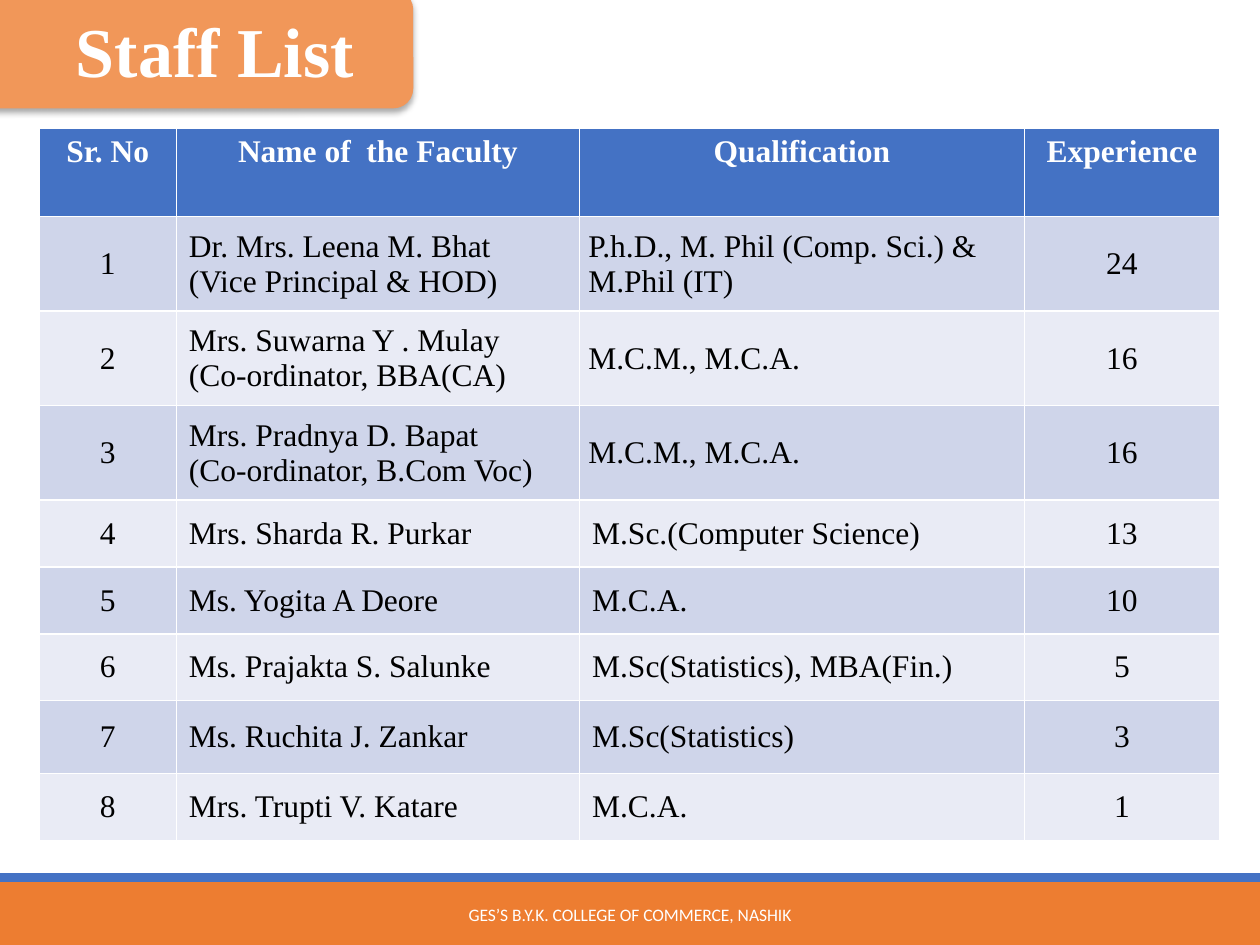
from lxml import etree
from pptx import Presentation
from pptx.dml.color import RGBColor
from pptx.enum import shapes, text
from pptx.oxml import ns
from pptx.util import Inches, Pt

WHITE = RGBColor(0xFF, 0xFF, 0xFF)
BLACK = RGBColor(0, 0, 0)
ORANGE = RGBColor(0xED, 0x7D, 0x31)
LIGHT_ORANGE = RGBColor(0xF1, 0x97, 0x59)
BLUE = RGBColor(0x44, 0x72, 0xC4)
BANDS = (RGBColor(0xCF, 0xD5, 0xEA), RGBColor(0xE9, 0xEB, 0xF5))
SERIF = "Times New Roman"

HEADINGS = ("Sr. No", "Name of  the Faculty", "Qualification", "Experience")
STAFF = (
    ("Dr. Mrs. Leena M. Bhat\n(Vice Principal & HOD)",
     "P.h.D., M. Phil (Comp. Sci.) & M.Phil (IT)", 24),
    ("Mrs. Suwarna Y . Mulay\n(Co-ordinator, BBA(CA)", "M.C.M., M.C.A.", 16),
    ("Mrs. Pradnya D. Bapat\n(Co-ordinator, B.Com Voc)", "M.C.M., M.C.A.", 16),
    ("Mrs. Sharda R. Purkar", "M.Sc.(Computer Science)", 13),
    ("Ms. Yogita A Deore", "M.C.A.", 10),
    ("Ms. Prajakta S. Salunke", "M.Sc(Statistics), MBA(Fin.)", 5),
    ("Ms. Ruchita J. Zankar", "M.Sc(Statistics)", 3),
    ("Mrs. Trupti V. Katare", "M.C.A.", 1),
)
COLUMN_WIDTHS = (1.09, 3.2, 3.53, 1.55)
ROW_HEIGHTS = (0.7, 0.75, 0.75, 0.75, 0.53, 0.53, 0.53, 0.58, 0.53)
CENTRED_COLUMNS = (0, 3)


def box(left, top, width, height):
    return Inches(left), Inches(top), Inches(width), Inches(height)


def style_text(frame, font_name, size, color, bold=False, centred=True):
    for paragraph in frame.paragraphs:
        paragraph.alignment = text.PP_ALIGN.CENTER if centred else text.PP_ALIGN.LEFT
        paragraph.font.name = font_name
        paragraph.font.size = Pt(size)
        paragraph.font.bold = bold
        paragraph.font.color.rgb = color


def add_block(slide, kind, place, color):
    block = slide.shapes.add_shape(kind, *box(*place))
    block.shadow.inherit = False
    block.fill.solid()
    block.fill.fore_color.rgb = color
    block.line.fill.background()
    return block


def add_soft_shadow(block):
    effects = block._element.spPr.find(ns.qn("a:effectLst"))
    shadow = etree.SubElement(
        effects, ns.qn("a:outerShdw"), blurRad=str(Pt(3.5)), dist=str(Pt(2.2)),
        dir="5400000", algn="ctr", rotWithShape="0")
    color = etree.SubElement(shadow, ns.qn("a:srgbClr"), val=str(BLACK))
    etree.SubElement(color, ns.qn("a:alpha"), val="32000")


def add_title(slide):
    place = (-0.63, -0.08, 3.91, 0.94)
    tab = add_block(slide, shapes.MSO_SHAPE.ROUNDED_RECTANGLE, place, LIGHT_ORANGE)
    add_soft_shadow(tab)
    title = slide.shapes.title
    title.left, title.top, title.width, title.height = box(*place)
    title.text = "Staff List"
    frame = title.text_frame
    frame.margin_left = Inches(0.86)
    frame.vertical_anchor = text.MSO_ANCHOR.MIDDLE
    style_text(frame, SERIF, 40, WHITE, bold=True)
    tab._element.addnext(title._element)


def fill_cell(cell, words, color):
    cell.text = str(words)
    cell.fill.solid()
    cell.fill.fore_color.rgb = color


def add_staff_table(slide):
    table = slide.shapes.add_table(
        len(STAFF) + 1, len(HEADINGS), *box(0.31, 1.02, 9.37, 5.65)).table
    for column, width in zip(table.columns, COLUMN_WIDTHS):
        column.width = Inches(width)
    for row, height in zip(table.rows, ROW_HEIGHTS):
        row.height = Inches(height)
    for column, heading in enumerate(HEADINGS):
        cell = table.cell(0, column)
        fill_cell(cell, heading, BLUE)
        style_text(cell.text_frame, SERIF, 18, WHITE, bold=True)
    for number, member in enumerate(STAFF, 1):
        for column, words in enumerate((number, *member)):
            cell = table.cell(number, column)
            fill_cell(cell, words, BANDS[(number - 1) % 2])
            cell.vertical_anchor = text.MSO_ANCHOR.MIDDLE
            if number <= 3 and column >= 2:
                cell.margin_left = cell.margin_right = Inches(0.07)
                cell.margin_top = cell.margin_bottom = 0
            style_text(cell.text_frame, SERIF, 18, BLACK,
                       centred=column in CENTRED_COLUMNS)


def add_footer(slide):
    add_block(slide, shapes.MSO_SHAPE.RECTANGLE, (0, 7, 10, 0.5), ORANGE)
    add_block(slide, shapes.MSO_SHAPE.RECTANGLE, (0, 6.93, 10, 0.07), BLUE)
    college = slide.shapes.add_textbox(*box(3.02, 7.06, 3.96, 0.4)).text_frame
    college.word_wrap = True
    college.vertical_anchor = text.MSO_ANCHOR.MIDDLE
    college.text = "GES’S B.Y.K. COLLEGE OF COMMERCE, NASHIK"
    style_text(college, "Calibri", 10, WHITE)


def main():
    deck = Presentation()
    deck.slide_width, deck.slide_height = Inches(10), Inches(7.5)
    slide = deck.slides.add_slide(deck.slide_layouts[5])
    add_footer(slide)
    add_staff_table(slide)
    add_title(slide)
    deck.save("out.pptx")


if __name__ == "__main__":
    main()
